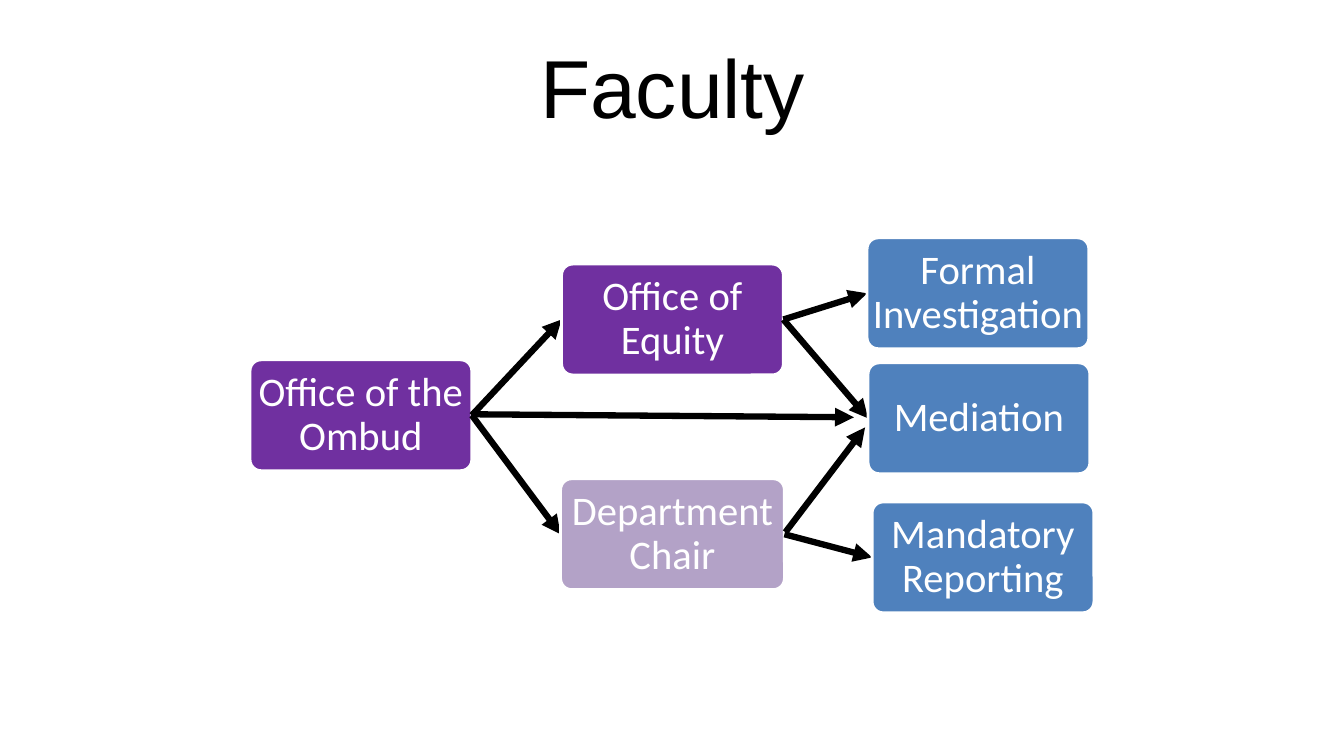
from lxml import etree
from pptx import Presentation
from pptx import util as u
from pptx.dml.color import RGBColor
from pptx.enum import shapes, text
from pptx.oxml.ns import qn

PX = 9144  # EMU in one px, 100 px to the inch
HUES = {"ink": "000000", "paper": "FFFFFF", "office": "7030A0",
        "chair": "B3A2C7", "result": "4F81BD"}
TALL = 110

# label, colour, left, top, width, label of the box that leads here
BOXES = [
    ("Office of the Ombud", "office", 248, 357, 220, None),
    ("Office of Equity", "office", 557, 262, 220, "Office of the Ombud"),
    ("Formal Investigation", "result", 860, 236, 220, "Office of Equity"),
    ("Mediation", "result", 861, 360, 220, "Office of Equity"),
    ("Department Chair", "chair", 556, 475, 222, "Office of the Ombud"),
    ("Mandatory Reporting", "result", 865, 498, 220, "Department Chair"),
]
# routes that join Mediation from the other boxes
JOINS = [((779, 528), (858, 424)), ((467, 411), (847, 414))]


class Deck:
    def __init__(self):
        self.show = Presentation()
        self.show.slide_width, self.show.slide_height = self.px(1333, 750)
        self.slide = self.show.slides.add_slide(self.show.slide_layouts[6])

    def px(self, *spans):
        """Turn px into EMU."""
        return [u.Emu(span * PX) for span in spans]

    def hue(self, name):
        return RGBColor.from_string(HUES[name])

    def letter(self, shape, words, font, size, hue, inset, line=1.0):
        """Set centred words in a shape."""
        frame = shape.text_frame
        form = {"word_wrap": True, "vertical_anchor": text.MSO_ANCHOR.MIDDLE}
        for side in ("left", "right", "top", "bottom"):
            form["margin_" + side] = u.Emu(inset * PX)
        for key, val in form.items():
            setattr(frame, key, val)
        para = frame.paragraphs[0]
        para.text = words
        para.alignment = text.PP_ALIGN.CENTER
        para.line_spacing = line
        for key, val in {"name": font, "size": u.Pt(size)}.items():
            setattr(para.font, key, val)
        para.font.color.rgb = self.hue(hue)

    def title(self, words, *place):
        box = self.slide.shapes.add_textbox(*self.px(*place))
        self.letter(box, words, "Arial", 58.7, "ink", 5)

    def box(self, words, hue, *place):
        box = self.slide.shapes.add_shape(
            shapes.MSO_SHAPE.ROUNDED_RECTANGLE, *self.px(*place))
        box.adjustments[0] = 0.1
        box.shadow.inherit = False
        box.fill.solid()
        box.fill.fore_color.rgb = self.hue(hue)
        box.line.color.rgb = self.hue("paper")
        box.line.width = u.Pt(2)
        self.letter(box, words, "Calibri", 29, "paper", 1, 0.9)

    def arrow(self, start, end):
        link = self.slide.shapes.add_connector(
            shapes.MSO_CONNECTOR.STRAIGHT, *self.px(*start, *end))
        link.line.color.rgb = self.hue("ink")
        link.line.width = u.Pt(4.5)
        props = link.element.spPr
        etree.SubElement(props.find(qn("a:ln")), qn("a:tailEnd"),
                         type="triangle")
        etree.SubElement(props, qn("a:effectLst"))


def main():
    deck = Deck()
    deck.title("Faculty", 67, 22, 1200, 125)
    exits = {}
    for label, hue, left, top, width, source in BOXES:
        middle = top + TALL // 2
        if source:
            deck.arrow(exits[source], (left, middle))
        deck.box(label, hue, left, top, width, TALL)
        exits[label] = (left + width, middle)
    for start, end in JOINS:
        deck.arrow(start, end)
    deck.show.save("out.pptx")


if __name__ == "__main__":
    main()
